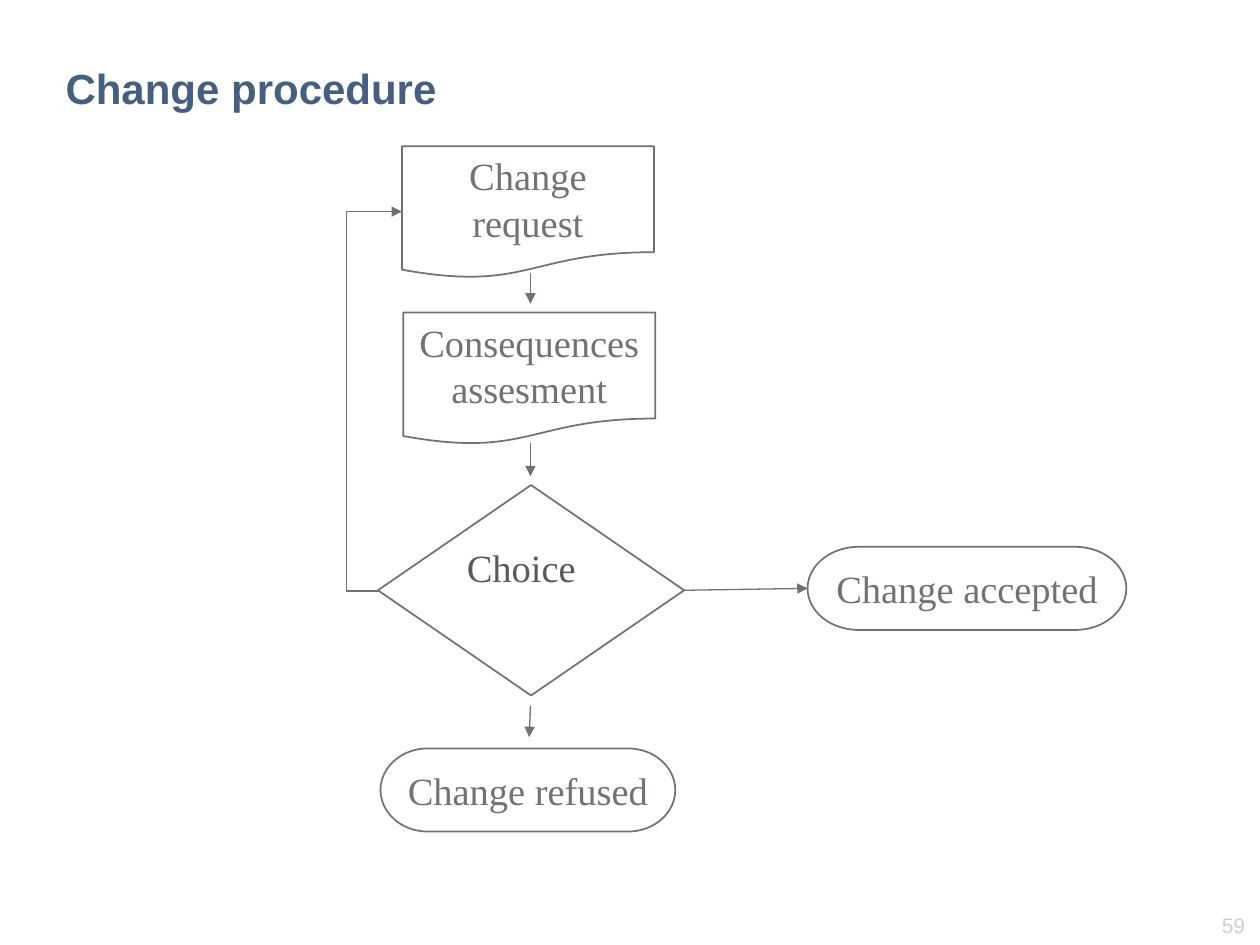
"""Build the change procedure flowchart slide."""
from lxml import etree
from pptx import Presentation
from pptx.dml.color import RGBColor
from pptx.enum.shapes import MSO_CONNECTOR, MSO_SHAPE
from pptx.enum.text import MSO_ANCHOR, PP_ALIGN
from pptx.oxml.ns import qn
from pptx.util import Inches, Pt

DOCUMENT = MSO_SHAPE.FLOWCHART_DOCUMENT
TERMINATOR = MSO_SHAPE.FLOWCHART_TERMINATOR
DIAMOND = MSO_SHAPE.DIAMOND
STRAIGHT, ELBOW = MSO_CONNECTOR.STRAIGHT, MSO_CONNECTOR.ELBOW
LEFT, CENTER, RIGHT = PP_ALIGN.LEFT, PP_ALIGN.CENTER, PP_ALIGN.RIGHT
TOP, MIDDLE = MSO_ANCHOR.TOP, MSO_ANCHOR.MIDDLE

COLORS = {"title": "465F7F", "line": "767171", "choice": "595959", "number": "D0CECE"}
SANS, SERIF = "Arial", "Times New Roman"
TITLE = ("Change procedure", (0.42, 0.32, 7.77, 0.75))
PAGE_NUMBER = ("59", (9.16, 7.19, 0.82, 0.3))

STEPS = [
    ("Change request", DOCUMENT, (3.19, 1.16, 2, 1.05), CENTER, "line"),
    ("Consequences assesment", DOCUMENT, (3.2, 2.48, 2, 1.05), CENTER, "line"),
    ("Choice", DIAMOND, (3, 3.85, 2.43, 1.67), LEFT, "choice"),
    ("Change refused", TERMINATOR, (3.02, 5.94, 2.34, 0.66), CENTER, "line"),
    ("Change accepted", TERMINATOR, (6.41, 4.34, 2.53, 0.66), CENTER, "line"),
]
DOWN_ARROWS = [
    ((4.21, 2.17), (4.21, 2.41)),
    ((4.21, 3.52), (4.21, 3.78)),
    ((4.21, 5.6), (4.2, 5.85)),
]
ACCEPT_ARROW = ((5.43, 4.68), (6.41, 4.68))
RETURN_ARROW = ((3, 4.69), (3.19, 1.68))
RETURN_BEND = 2.75


def inches(values):
    return [Inches(value) for value in values]


def write(shape, text, font, size, color, align, anchor=TOP, bold=False):
    frame = shape.text_frame
    frame.text = text
    frame.vertical_anchor = anchor
    para = frame.paragraphs[0]
    para.alignment = align
    style = para.runs[0].font
    style.name, style.size, style.bold = font, Pt(size), bold
    style.color.rgb = RGBColor.from_string(COLORS[color])


def add_step(slide, text, kind, place, align, color):
    shape = slide.shapes.add_shape(kind, *inches(place))
    shape.shadow.inherit = False
    shape.fill.background()
    shape.line.color.rgb = RGBColor.from_string(COLORS["line"])
    shape.line.width = Pt(1)
    write(shape, text, SERIF, 22, color, align)
    shape.text_frame.word_wrap = kind != TERMINATOR
    return shape


def add_arrow(slide, start, end, kind=STRAIGHT, width=0.75):
    arrow = slide.shapes.add_connector(kind, *inches(start + end))
    arrow.line.color.rgb = RGBColor.from_string(COLORS["line"])
    arrow.line.width = Pt(width)
    etree.SubElement(arrow.line._get_or_add_ln(), qn("a:tailEnd"), type="triangle")
    etree.SubElement(arrow._element.spPr, qn("a:effectLst"))
    return arrow


def bend_at(arrow, start, end, bend):
    share = round((bend - start[0]) / (end[0] - start[0]) * 100000)
    guides = arrow._element.spPr.find(qn("a:prstGeom")).get_or_add_avLst()
    etree.SubElement(guides, qn("a:gd"), name="adj1", fmla=f"val {share}")


def main():
    deck = Presentation()
    deck.slide_width, deck.slide_height = Inches(10), Inches(7.5)
    slide = deck.slides.add_slide(deck.slide_layouts[5])

    text, place = TITLE
    title = slide.shapes.title
    title.left, title.top, title.width, title.height = inches(place)
    write(title, text, SANS, 24, "title", LEFT, MIDDLE, True)

    text, place = PAGE_NUMBER
    number = slide.shapes.add_textbox(*inches(place))
    number.text_frame.word_wrap = True
    write(number, text, SANS, 12, "number", RIGHT)

    shapes = {step[0]: add_step(slide, *step) for step in STEPS}

    return_arrow = add_arrow(slide, *RETURN_ARROW, ELBOW, 1)
    bend_at(return_arrow, *RETURN_ARROW, RETURN_BEND)
    for start, end in DOWN_ARROWS:
        add_arrow(slide, start, end)
    accept_arrow = add_arrow(slide, *ACCEPT_ARROW)
    accept_arrow.begin_connect(shapes["Choice"], 3)
    accept_arrow.end_connect(shapes["Change accepted"], 1)

    deck.save("out.pptx")


if __name__ == "__main__":
    main()
